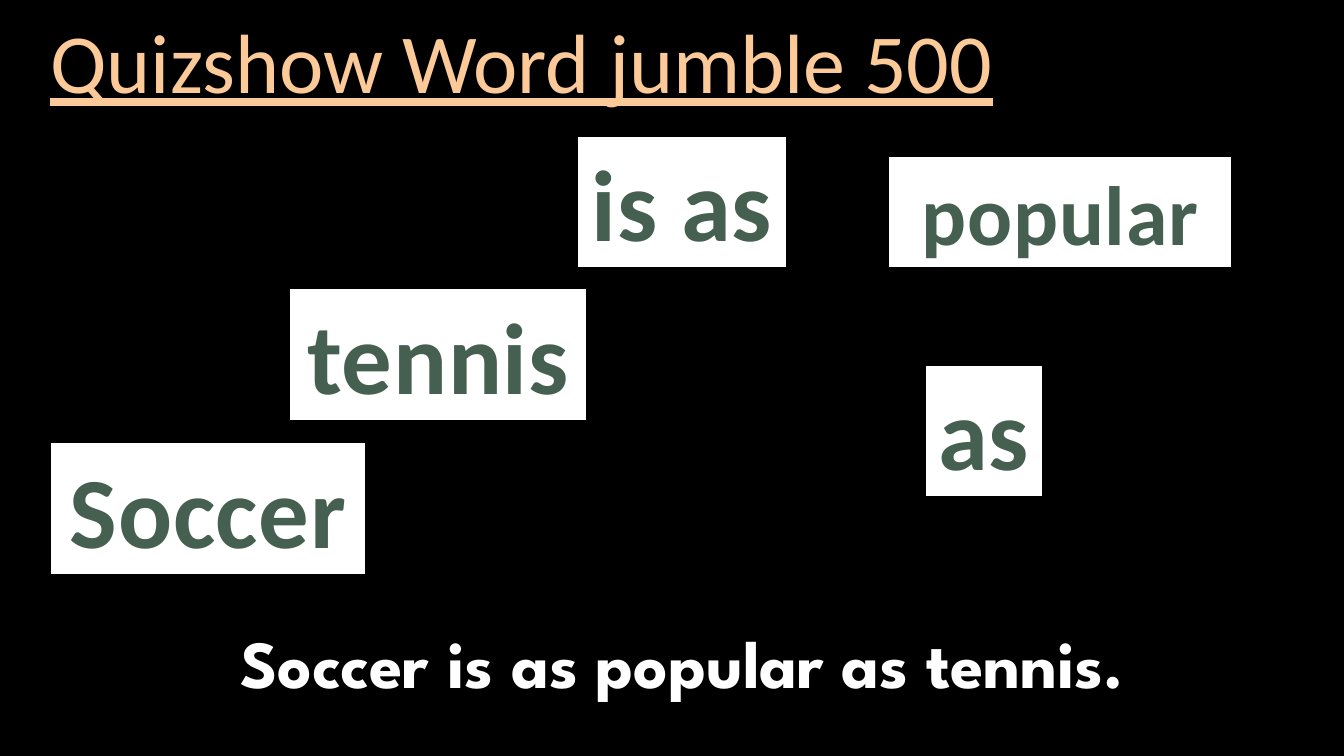
from dataclasses import dataclass

from pptx import Presentation
from pptx.dml.color import RGBColor
from pptx.enum.shapes import MSO_SHAPE as Preset
from pptx.enum.text import MSO_ANCHOR as Anchor
from pptx.enum.text import MSO_AUTO_SIZE as AutoSize
from pptx.enum.text import PP_ALIGN as Align
from pptx.util import Inches, Pt


@dataclass(frozen=True)
class Theme:
    background: RGBColor = RGBColor.from_string("000000")
    title: RGBColor = RGBColor.from_string("FBCA98")
    card: RGBColor = RGBColor.from_string("FFFFFF")
    word: RGBColor = RGBColor.from_string("455F51")
    answer: RGBColor = RGBColor.from_string("FFFFFF")
    body_font: str = "Calibri"
    answer_font: str = "League Spartan"
    title_size: int = 60
    word_size: int = 72
    long_word_size: int = 60
    answer_size: int = 48


THEME = Theme()

WORD_CARDS = [
    ("Soccer", (0.5, 4.39, 3.13, 1.31), THEME.word_size),
    ("is as", (5.73, 1.35, 2.07, 1.31), THEME.word_size),
    ("popular", (8.81, 1.55, 3.41, 1.11), THEME.long_word_size),
    ("as", (9.18, 3.62, 1.16, 1.31), THEME.word_size),
    ("tennis", (2.87, 2.86, 2.95, 1.31), THEME.word_size),
]


def apply_format(target, values):
    for name, value in values.items():
        setattr(target, name, value)


def write_text(shape, text, color, frame_format, font_format, alignment):
    apply_format(shape.text_frame, frame_format)
    paragraph = shape.text_frame.paragraphs[0]
    paragraph.alignment = alignment
    run = paragraph.add_run()
    run.text = text
    apply_format(run.font, font_format)
    run.font.color.rgb = color
    return run


def add_title(slide, text):
    box = slide.shapes.add_textbox(*map(Inches, (0.4, 0.16, 11.39, 0.99)))
    write_text(
        box, text, THEME.title,
        {"word_wrap": True, "vertical_anchor": Anchor.MIDDLE},
        {"name": THEME.body_font, "size": Pt(THEME.title_size), "underline": True},
        Align.LEFT,
    )
    box.text_frame.paragraphs[0].line_spacing = 0.9


def add_word_card(slide, word, bounds, size):
    card = slide.shapes.add_shape(Preset.RECTANGLE, *map(Inches, bounds))
    card.shadow.inherit = False
    card.fill.solid()
    card.fill.fore_color.rgb = THEME.card
    card.line.color.rgb = THEME.background
    card.line.width = Pt(1)
    run = write_text(
        card, word, THEME.word,
        {"word_wrap": size != THEME.word_size, "vertical_anchor": Anchor.TOP,
         "auto_size": AutoSize.SHAPE_TO_FIT_TEXT},
        {"name": THEME.body_font, "size": Pt(size), "bold": True},
        Align.CENTER,
    )
    run.font._element.set("spc", "50")


def add_answer(slide, text):
    box = slide.shapes.add_textbox(*map(Inches, (1.77, 6.11, 10, 0.91)))
    write_text(
        box, text, THEME.answer,
        {"word_wrap": False, "auto_size": AutoSize.SHAPE_TO_FIT_TEXT},
        {"name": THEME.answer_font, "size": Pt(THEME.answer_size), "bold": True},
        Align.CENTER,
    )


def main():
    presentation = Presentation()
    presentation.slide_width = Inches(13.33)
    presentation.slide_height = Inches(7.5)
    slide = presentation.slides.add_slide(presentation.slide_layouts[6])
    slide.background.fill.solid()
    slide.background.fill.fore_color.rgb = THEME.background
    add_title(slide, "Quizshow Word jumble 500")
    for word, bounds, size in WORD_CARDS:
        add_word_card(slide, word, bounds, size)
    add_answer(slide, "Soccer is as popular as tennis.")
    presentation.save("out.pptx")


if __name__ == "__main__":
    main()
